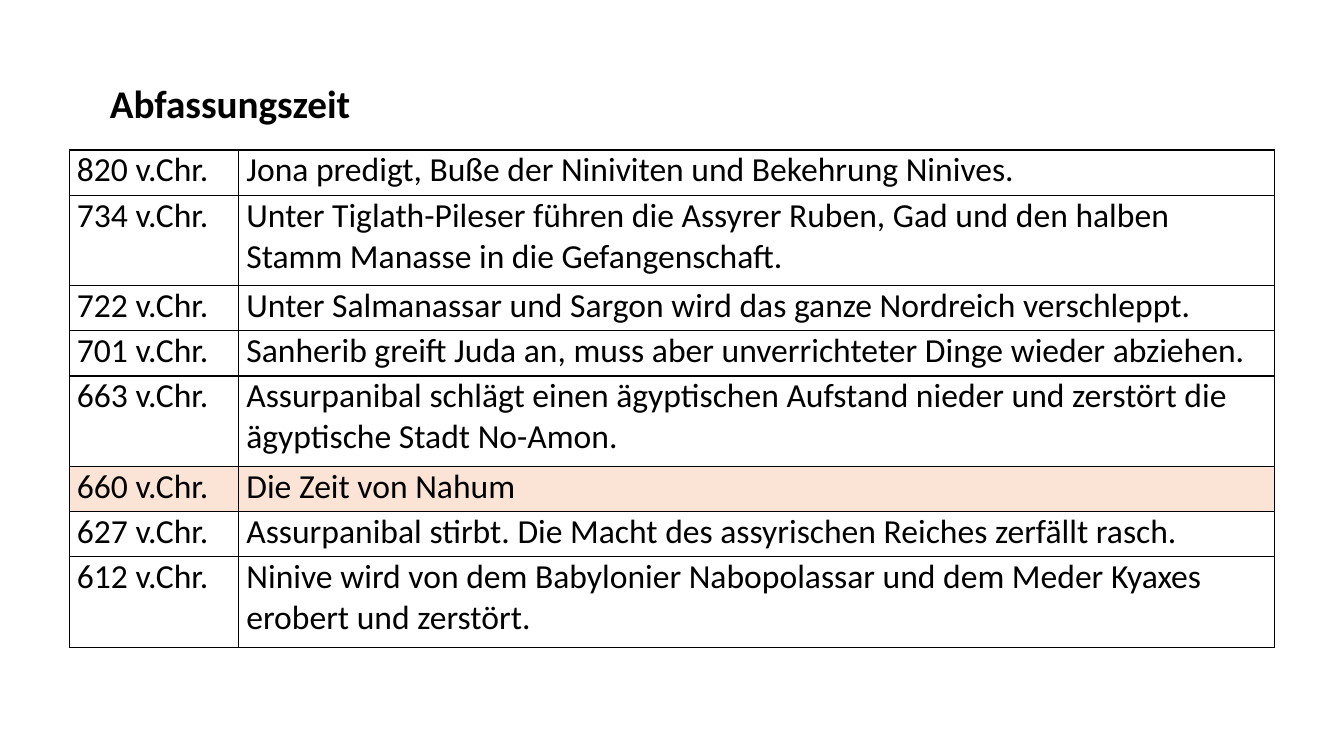
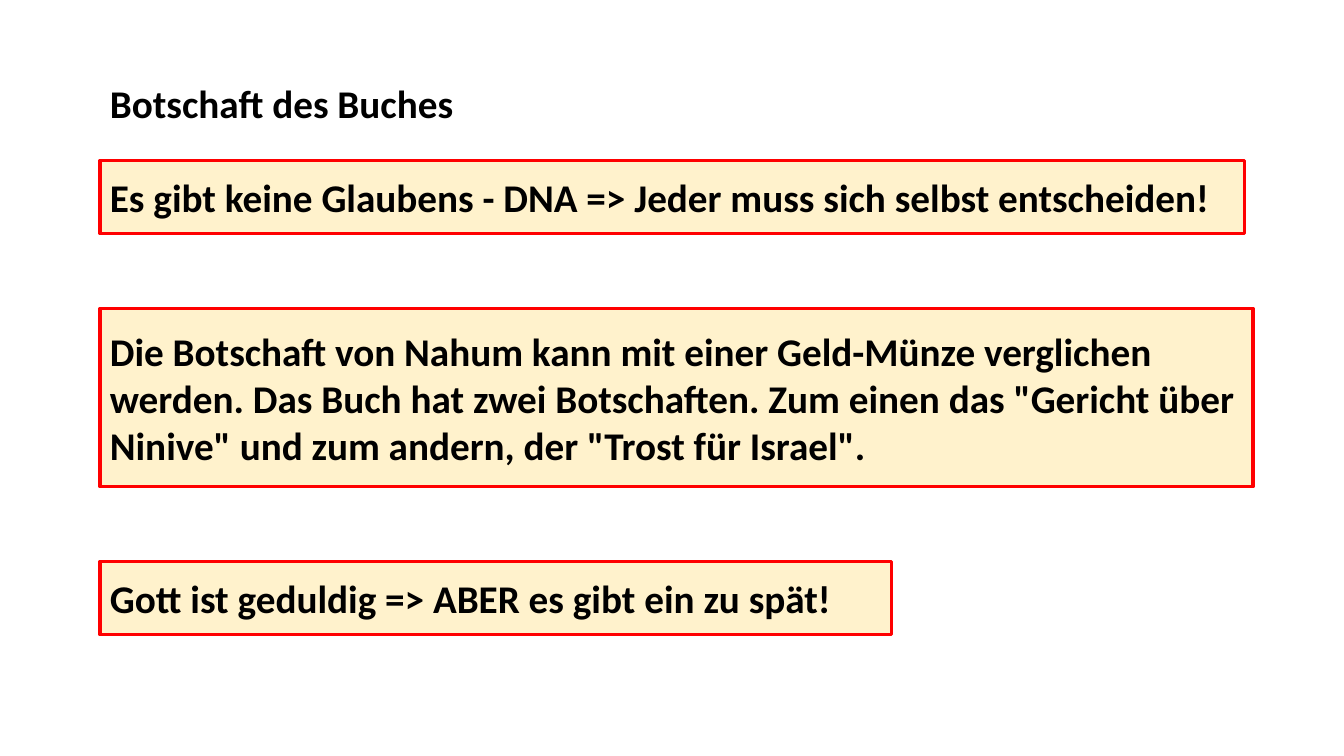
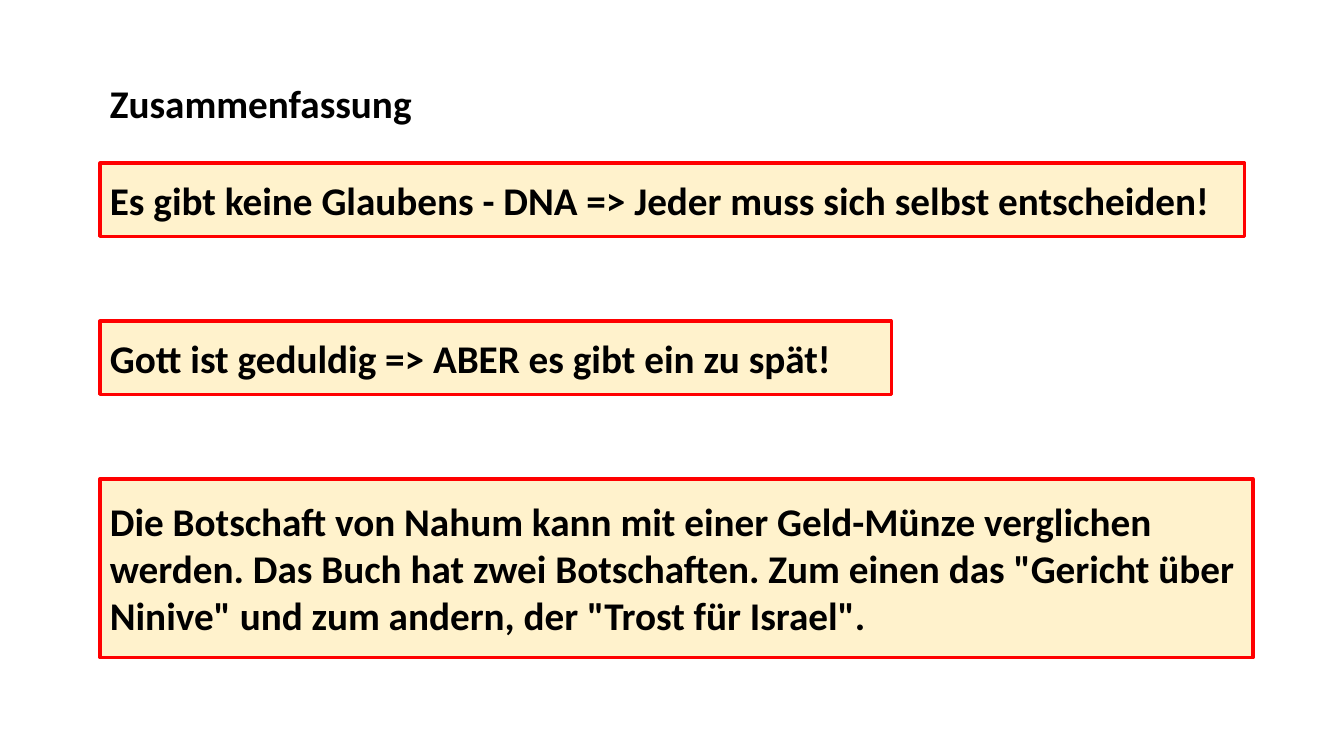
from lxml.etree import SubElement
from pptx import Presentation
from pptx.dml.color import RGBColor
from pptx.enum.shapes import MSO_SHAPE
from pptx.enum.text import MSO_ANCHOR, MSO_AUTO_SIZE, PP_ALIGN
from pptx.oxml.ns import qn
from pptx.util import Cm, Pt

COLORS = {"text": "000000", "border": "000000", "highlight": "FBE4D5",
          "box": "FFF2CC", "frame": "FF0000"}
LEFT = 2.52

# Each message: text, width and height in cm
DECISION = ("Es gibt keine Glaubens - DNA => Jeder muss sich selbst entscheiden!", 28.85, 1.85)
PATIENCE = ("Gott ist geduldig => ABER es gibt ein zu spät!", 19.94, 1.85)
COIN = ("Die Botschaft von Nahum kann mit einer Geld-Münze verglichen werden. "
        'Das Buch hat zwei Botschaften. Zum einen das "Gericht über Ninive" '
        'und zum andern, der "Trost für Israel".', 29.06, 4.5)

# Each event: year, text, number of text lines
EVENTS = [
    (820, "Jona predigt, Buße der Niniviten und Bekehrung Ninives.", 1),
    (734, "Unter Tiglath-Pileser führen die Assyrer Ruben, Gad und den halben "
          "Stamm Manasse in die Gefangenschaft.", 2),
    (722, "Unter Salmanassar und Sargon wird das ganze Nordreich verschleppt.", 1),
    (701, "Sanherib greift Juda an, muss aber unverrichteter Dinge wieder abziehen.", 1),
    (663, "Assurpanibal schlägt einen ägyptischen Aufstand nieder und zerstört die "
          "ägyptische Stadt No-Amon.", 2),
    (660, "Die Zeit von Nahum", 1),
    (627, "Assurpanibal stirbt. Die Macht des assyrischen Reiches zerfällt rasch.", 1),
    (612, "Ninive wird von dem Babylonier Nabopolassar und dem Meder Kyaxes "
          "erobert und zerstört.", 2),
]
NAHUM_YEAR = 660


def rgb(name):
    return RGBColor.from_string(COLORS[name])


class Deck:
    def __init__(self):
        self.prs = Presentation()
        self.prs.slide_width, self.prs.slide_height = Cm(33.87), Cm(19.05)
        self.s = None

    def put_text(self, tf, text, size=28, bold=True):
        tf.word_wrap = True
        p = tf.paragraphs[0]
        p.text = text
        p.alignment = PP_ALIGN.LEFT
        p.font.name, p.font.size, p.font.bold = "Calibri", Pt(size), bold
        p.font.color.rgb = rgb("text")
        return p

    def slide(self, title, width):
        self.s = self.prs.slides.add_slide(self.prs.slide_layouts[6])
        tf = self.s.shapes.add_textbox(Cm(LEFT), Cm(1.8), Cm(width), Cm(1.48)).text_frame
        p = self.put_text(tf, title)
        p.line_spacing, p.space_before = 1.07, Pt(12)
        tf.word_wrap = False
        tf.auto_size = MSO_AUTO_SIZE.SHAPE_TO_FIT_TEXT

    def box(self, text, top, width, height):
        sp = self.s.shapes.add_shape(MSO_SHAPE.RECTANGLE, Cm(LEFT), Cm(top),
                                     Cm(width), Cm(height))
        sp.shadow.inherit = False
        sp.fill.solid()
        sp.fill.fore_color.rgb = rgb("box")
        sp.line.color.rgb = rgb("frame")
        sp.line.width = Pt(2.25)
        sp.text_frame.vertical_anchor = MSO_ANCHOR.MIDDLE
        self.put_text(sp.text_frame, text)

    def stack(self, messages, top, gap):
        """Place message boxes below each other with equal gaps."""
        for text, width, height in messages:
            self.box(text, top, width, height)
            top += height + gap

    def cell(self, cell, text, highlighted):
        cell.margin_left = cell.margin_right = Cm(0.19)
        cell.margin_top = cell.margin_bottom = 0
        self.put_text(cell.text_frame, text, 24, False)
        tc_pr = cell._tc.get_or_add_tcPr()
        for side in ("a:lnL", "a:lnR", "a:lnT", "a:lnB"):
            ln = SubElement(tc_pr, qn(side), w=str(Pt(1)))
            fill = SubElement(ln, qn("a:solidFill"))
            SubElement(fill, qn("a:srgbClr"), val=COLORS["border"])
        if highlighted:
            cell.fill.solid()
            cell.fill.fore_color.rgb = rgb("highlight")
        else:
            cell.fill.background()

    def timeline(self, events, widths, line_height):
        height = line_height * sum(lines for _, _, lines in events)
        table = self.s.shapes.add_table(len(events), 2, Cm(1.75), Cm(3.78),
                                        Cm(sum(widths)), Cm(height)).table
        table.first_row = table.horz_banding = False
        for column, width in zip(table.columns, widths):
            column.width = Cm(width)
        for row, (year, text, lines) in zip(table.rows, events):
            row.height = Cm(line_height * lines)
            for cell, content in zip(row.cells, (f"{year} v.Chr.", text)):
                self.cell(cell, content, year == NAHUM_YEAR)


def main():
    deck = Deck()
    deck.slide("Abfassungszeit", 6.68)
    deck.timeline(EVENTS, (4.27, 26.09), 1.14)
    deck.slide("Botschaft des Buches", 9.3)
    deck.stack((DECISION, COIN, PATIENCE), 4.04, 1.88)
    deck.slide("Zusammenfassung", 8.2)
    deck.stack((DECISION, PATIENCE, COIN), 4.11, 2.13)
    deck.prs.save("out.pptx")


if __name__ == "__main__":
    main()
